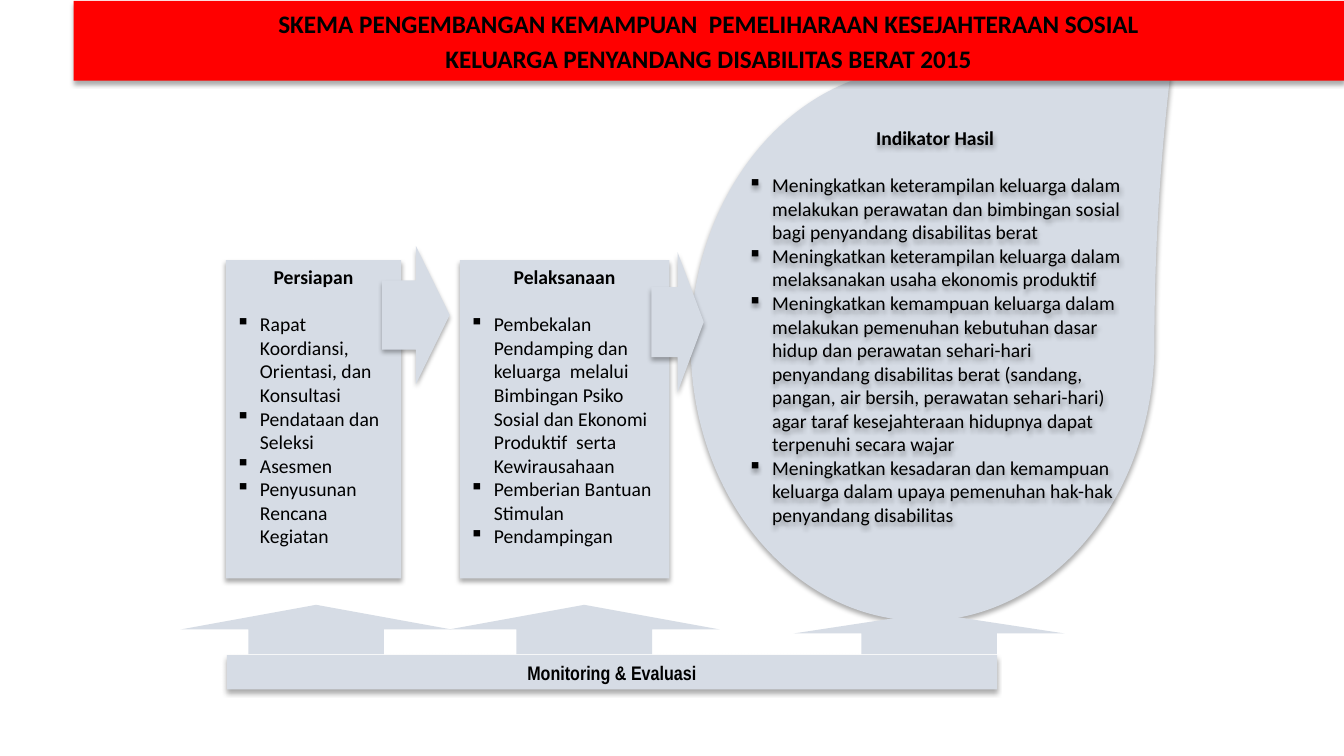
"""Build the slide with the family welfare scheme."""
from dataclasses import dataclass
from typing import Optional

from lxml.etree import SubElement as Sub
from pptx import Presentation as Deck
from pptx.dml.color import RGBColor as Color
from pptx.enum.shapes import MSO_SHAPE as Kind
from pptx.enum.text import MSO_ANCHOR as Anchor, PP_ALIGN as Align
from pptx.oxml.ns import qn
from pptx.util import Inches, Pt

GREY = Color(0xD6, 0xDC, 0xE5)
RED = Color(0xFF, 0x00, 0x00)
BLACK = Color(0x00, 0x00, 0x00)
HANG = Inches(0.24)
LINE = Pt(17)


@dataclass
class Part:
    """One shape on the slide, with its text."""
    kind: Optional[Kind]
    box: tuple[float, float, float, float]
    heads: tuple[str, ...] = ()
    items: tuple[str, ...] = ()
    fill: Color = GREY
    shade: bool = True
    size: int = 14
    face: str = "Calibri"
    lead: float = 0
    turn: Optional[float] = None


PARTS = [
    Part(Kind.TEAR, (6.85, 0.67, 4.6, 5.49), turn=1.085),
    Part(Kind.RECTANGLE, (2.24, 2.58, 1.74, 3.16), ("Persiapan",), (
        "Rapat Koordiansi, Orientasi, dan Konsultasi",
        "Pendataan dan Seleksi",
        "Asesmen",
        "Penyusunan Rencana Kegiatan")),
    Part(Kind.RECTANGLE, (4.56, 2.58, 2.08, 3.16), ("Pelaksanaan",), (
        "Pembekalan Pendamping dan keluarga  melalui Bimbingan Psiko Sosial "
        "dan Ekonomi Produktif  serta Kewirausahaan",
        "Pemberian Bantuan Stimulan",
        "Pendampingan")),
    Part(Kind.RIGHT_ARROW, (6.46, 2.5, 0.52, 1.39)),
    Part(None, (7.32, 1.2, 3.91, 4.34), ("Indikator Hasil",), (
        "Meningkatkan keterampilan keluarga dalam melakukan perawatan dan "
        "bimbingan sosial bagi penyandang disabilitas berat",
        "Meningkatkan keterampilan keluarga dalam melaksanakan usaha "
        "ekonomis produktif",
        "Meningkatkan kemampuan keluarga dalam melakukan pemenuhan kebutuhan "
        "dasar hidup dan perawatan sehari-hari penyandang disabilitas berat "
        "(sandang, pangan, air bersih, perawatan sehari-hari) agar taraf "
        "kesejahteraan hidupnya dapat terpenuhi secara wajar",
        "Meningkatkan kesadaran dan kemampuan keluarga dalam upaya pemenuhan "
        "hak-hak penyandang disabilitas")),
    Part(Kind.RECTANGLE, (2.25, 6.5, 7.64, 0.34), ("Monitoring & Evaluasi",),
         face="Arial Narrow"),
    Part(Kind.UP_ARROW, (4.45, 6, 2.69, 0.49), shade=False),
    Part(Kind.UP_ARROW, (1.79, 6, 2.69, 0.49), shade=False),
    Part(Kind.UP_ARROW, (7.87, 6.08, 2.69, 0.41), shade=False),
    Part(Kind.RIGHT_ARROW, (3.79, 2.44, 0.67, 1.37)),
    Part(Kind.RECTANGLE, (0.73, 0.01, 12.6, 0.79), (
        "SKEMA PENGEMBANGAN KEMAMPUAN  PEMELIHARAAN KESEJAHTERAAN SOSIAL",
        "KELUARGA PENYANDANG DISABILITAS BERAT 2015"),
        fill=RED, size=18, lead=3.6),
]


def apply(thing, form: dict) -> None:
    """Set each value of the form on the thing."""
    for name, value in form.items():
        setattr(thing, name, value)


def cast(shape) -> None:
    """Give the shape a soft shadow below it."""
    glow = Sub(shape._element.spPr.find(qn("a:effectLst")), qn("a:outerShdw"),
               blurRad=str(Pt(3.5)), dist=str(Pt(2.2)), dir="5400000",
               rotWithShape="0")
    tone = Sub(glow, qn("a:srgbClr"), val=str(BLACK))
    Sub(tone, qn("a:alpha"), val="32000")


def write(shape, part: Part) -> None:
    """Write the heads and the bullet items of the part."""
    frame = shape.text_frame
    apply(frame, {
        "word_wrap": True,
        "vertical_anchor": Anchor.TOP if part.items else Anchor.MIDDLE})
    for i, text in enumerate(part.heads + part.items):
        head = i < len(part.heads)
        para = frame.paragraphs[0] if i == 0 else frame.add_paragraph()
        apply(para, {
            "alignment": Align.CENTER if head else Align.LEFT,
            "space_before": Pt(part.lead),
            "space_after": LINE if head and part.items else Pt(0)})
        run = para.add_run()
        run.text = text
        apply(run.font, {"size": Pt(part.size), "name": part.face,
                         "bold": head})
        run.font.color.rgb = BLACK
        if not head:
            props = para._p.get_or_add_pPr()
            props.set("marL", str(HANG))
            props.set("indent", str(-HANG))
            Sub(props, qn("a:buChar"), char="▪")


def draw(slide, part: Part) -> None:
    """Draw the part on the slide."""
    box = [Inches(n) for n in part.box]
    if part.kind is None:
        shape = slide.shapes.add_textbox(*box)
        shape.fill.background()
    else:
        shape = slide.shapes.add_shape(part.kind, *box)
        shape.fill.solid()
        shape.fill.fore_color.rgb = part.fill
    shape.line.fill.background()
    shape.shadow.inherit = False
    if part.turn is not None:
        shape.adjustments[0] = part.turn
    if part.shade:
        cast(shape)
    if part.heads:
        write(shape, part)


def main() -> None:
    """Make the deck and save it."""
    deck = Deck()
    apply(deck, {"slide_width": Inches(13.33), "slide_height": Inches(7.5)})
    slide = deck.slides.add_slide(deck.slide_layouts[6])
    for part in PARTS:
        draw(slide, part)
    deck.save("out.pptx")


if __name__ == "__main__":
    main()
